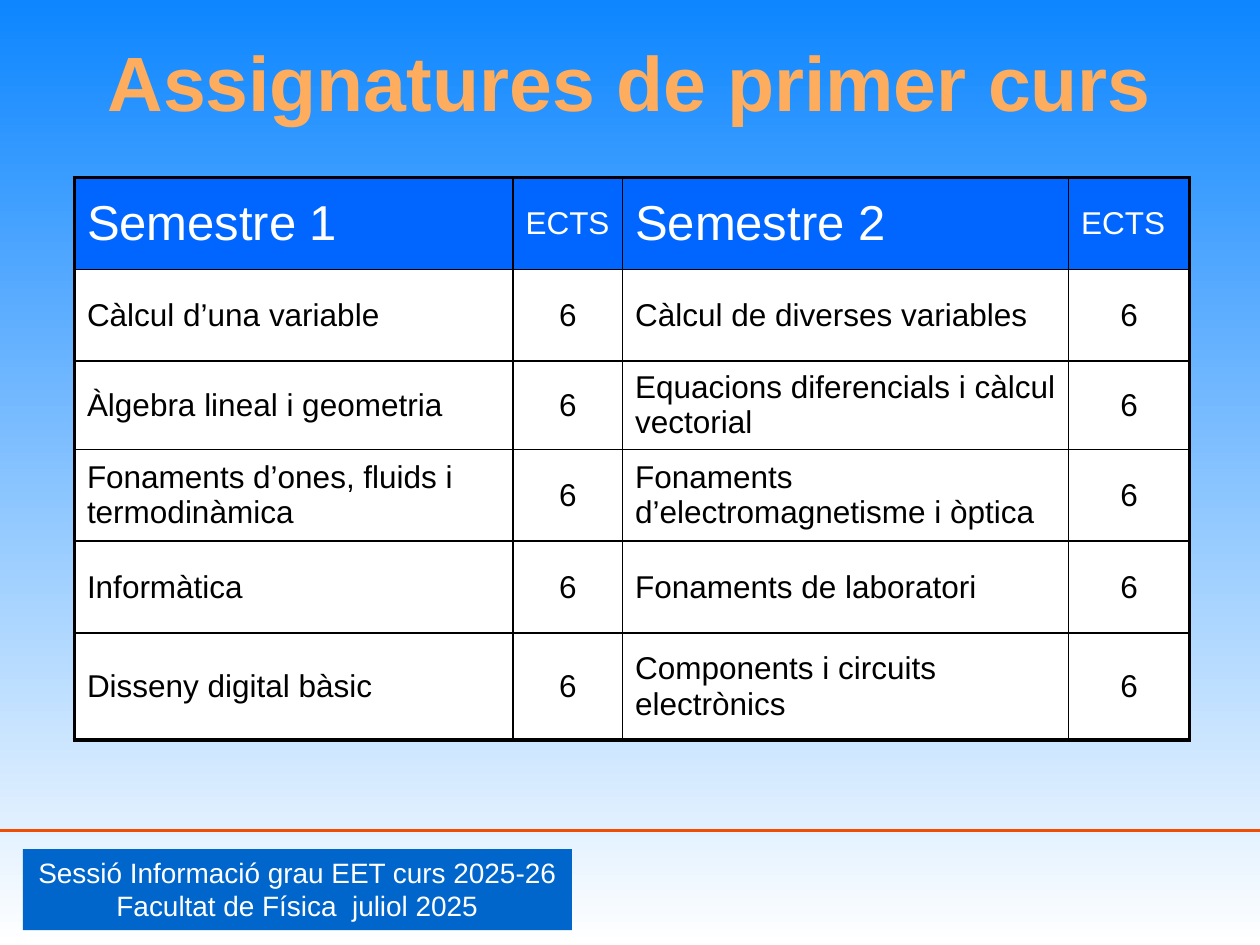
from dataclasses import dataclass
from typing import Any

from lxml.etree import SubElement
from pptx import Presentation
from pptx.dml.color import RGBColor
from pptx.enum.shapes import MSO_CONNECTOR as Connector, MSO_SHAPE as Shape
from pptx.enum.text import MSO_ANCHOR as Anchor, MSO_AUTO_SIZE as AutoSize, PP_ALIGN as Align
from pptx.oxml.ns import qn
from pptx.util import Cm, Pt

COLUMN_WIDTHS = (8.84, 2.21, 8.99, 2.44)
ROW_HEIGHTS = (1.85, 1.85, 1.78, 1.85, 1.85, 2.16)
CREDITS = "6"


@dataclass(frozen=True)
class TextStyle:
    size: float
    colour: str
    align: Align = Align.LEFT
    bold: bool = False


@dataclass(frozen=True)
class SubjectRow:
    first_semester: str
    second_semester: str


TITLE = TextStyle(44, "FDAD5D", Align.CENTER, True)
BANNER = TextStyle(16, "FFFFFF", Align.CENTER)
SEMESTER = TextStyle(28, "FFFFFF")
ECTS = TextStyle(18, "FFFFFF")
SUBJECT = TextStyle(18, "000000")
CREDIT = TextStyle(18, "000000", Align.CENTER)

SUBJECT_ROWS = (
    SubjectRow("Càlcul d’una variable", "Càlcul de diverses variables"),
    SubjectRow("Àlgebra lineal i geometria", "Equacions diferencials i càlcul vectorial"),
    SubjectRow("Fonaments d’ones, fluids i termodinàmica", "Fonaments d’electromagnetisme i òptica"),
    SubjectRow("Informàtica", "Fonaments de laboratori"),
    SubjectRow("Disseny digital bàsic", "Components i circuits electrònics"),
)


def rgb(colour: str) -> RGBColor:
    return RGBColor.from_string(colour)


def apply(target: Any, values: dict[str, Any]) -> None:
    for name, value in values.items():
        setattr(target, name, value)


def write(text_frame: Any, lines: tuple[str, ...], style: TextStyle) -> None:
    for index, line in enumerate(lines):
        paragraph = text_frame.add_paragraph() if index else text_frame.paragraphs[0]
        paragraph.alignment = style.align
        run = paragraph.add_run()
        run.text = line
        apply(run.font, {"name": "Arial", "size": Pt(style.size), "bold": style.bold})
        run.font.color.rgb = rgb(style.colour)


def paint_background(slide: Any, top: str, bottom: str) -> None:
    fill = slide.background.fill
    fill.gradient()
    fill.gradient_angle = 270
    for stop, colour in zip(fill.gradient_stops, (top, bottom)):
        stop.color.rgb = rgb(colour)


def add_title(slide: Any, text: str) -> None:
    title = slide.shapes.title
    apply(title, {"left": Cm(1.27), "top": Cm(0.76), "width": Cm(22.86), "height": Cm(1.75)})
    apply(title.text_frame, {"auto_size": AutoSize.NONE, "vertical_anchor": Anchor.MIDDLE})
    write(title.text_frame, (text,), TITLE)


def add_footer(slide: Any, width: int, lines: tuple[str, ...]) -> None:
    rule = slide.shapes.add_connector(Connector.STRAIGHT, 0, Cm(16.74), width, Cm(16.74))
    rule.line.width = Pt(1.5)
    rule.line.color.rgb = rgb("F04C02")
    SubElement(rule._element.spPr, qn("a:effectLst"))

    banner = slide.shapes.add_shape(Shape.RECTANGLE, Cm(0.46), Cm(17.12), Cm(11.07), Cm(1.63))
    banner.shadow.inherit = False
    banner.fill.solid()
    banner.fill.fore_color.rgb = rgb("0066CC")
    banner.line.fill.background()
    apply(banner.text_frame, {"word_wrap": False, "auto_size": AutoSize.SHAPE_TO_FIT_TEXT,
                              "vertical_anchor": Anchor.TOP})
    write(banner.text_frame, lines, BANNER)


def set_borders(cell: Any, outer_sides: dict[str, bool]) -> None:
    properties = cell._tc.get_or_add_tcPr()
    for side, is_outer in outer_sides.items():
        border = SubElement(properties, qn(f"a:ln{side}"), w=str(Pt(2.25 if is_outer else 1)))
        fill = SubElement(border, qn("a:solidFill"))
        SubElement(fill, qn("a:srgbClr"), val="000000")


def fill_cell(cell: Any, text: str, style: TextStyle, colour: str) -> None:
    cell.fill.solid()
    cell.fill.fore_color.rgb = rgb(colour)
    cell.vertical_anchor = Anchor.MIDDLE
    write(cell.text_frame, (text,), style)


def add_subject_table(slide: Any) -> None:
    rows = [("Semestre 1", "ECTS", "Semestre 2", "ECTS")]
    rows += [(row.first_semester, CREDITS, row.second_semester, CREDITS) for row in SUBJECT_ROWS]
    last_row, last_column = len(ROW_HEIGHTS) - 1, len(COLUMN_WIDTHS) - 1
    table = slide.shapes.add_table(
        len(ROW_HEIGHTS), len(COLUMN_WIDTHS), Cm(1.5), Cm(3.58),
        Cm(sum(COLUMN_WIDTHS)), Cm(sum(ROW_HEIGHTS))).table
    apply(table, {"first_row": False, "horz_banding": False})
    for column, width in zip(table.columns, COLUMN_WIDTHS):
        column.width = Cm(width)
    for row, height in zip(table.rows, ROW_HEIGHTS):
        row.height = Cm(height)
    for row_index, texts in enumerate(rows):
        styles = (SUBJECT, CREDIT) if row_index else (SEMESTER, ECTS)
        for column_index, text in enumerate(texts):
            cell = table.cell(row_index, column_index)
            set_borders(cell, {"L": column_index == 0, "R": column_index == last_column,
                               "T": row_index == 0, "B": row_index == last_row})
            fill_cell(cell, text, styles[column_index % 2], "FFFFFF" if row_index else "0066FF")


def main() -> None:
    presentation = Presentation()
    apply(presentation, {"slide_width": Cm(25.4), "slide_height": Cm(19.05)})
    slide = presentation.slides.add_slide(presentation.slide_layouts[5])
    paint_background(slide, "0D86FF", "FFFFFF")
    add_footer(slide, presentation.slide_width,
               ("Sessió Informació grau EET curs 2025-26", "Facultat de Física  juliol 2025"))
    add_title(slide, "Assignatures de primer curs")
    add_subject_table(slide)
    presentation.save("out.pptx")


if __name__ == "__main__":
    main()
